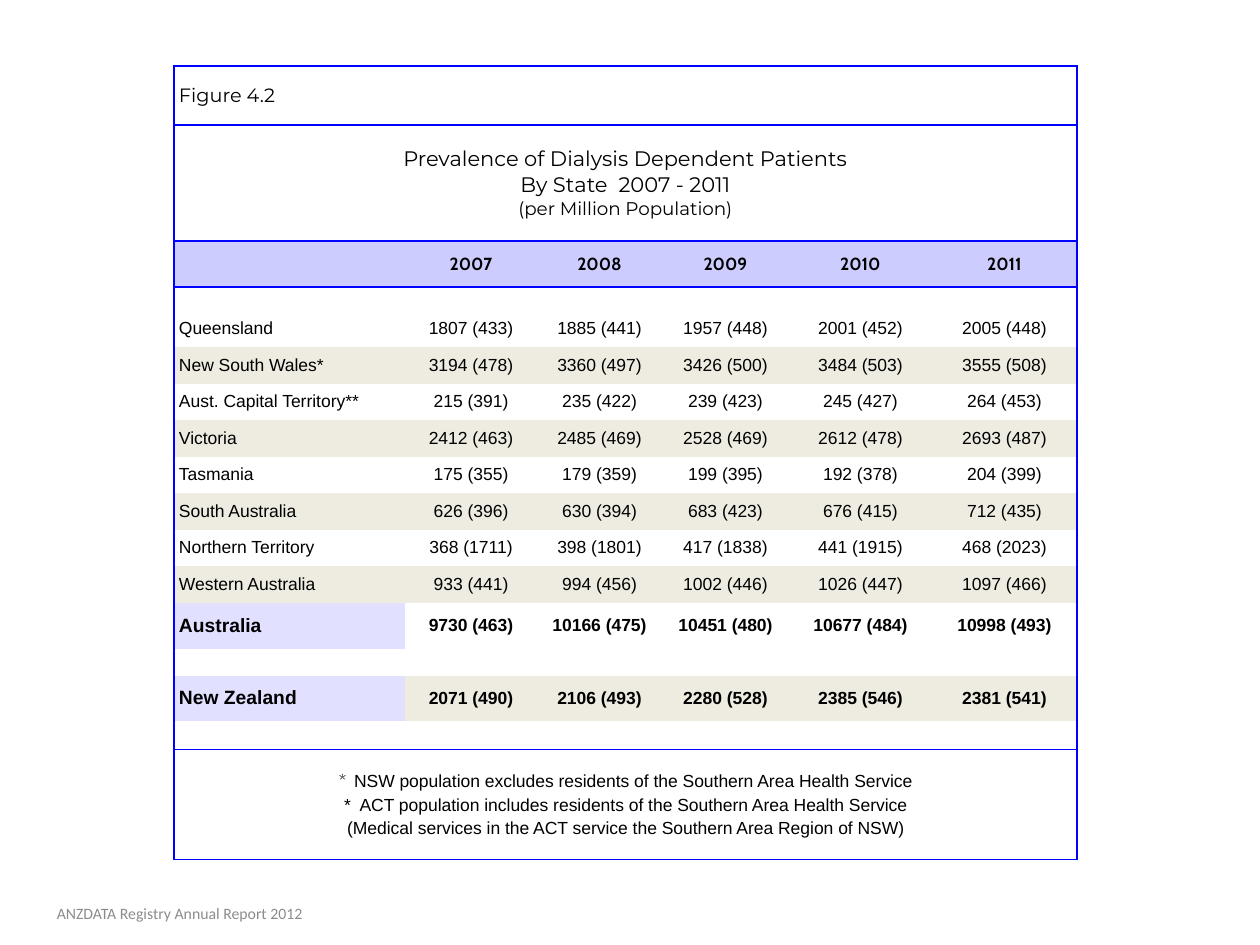
from lxml import etree
from pptx import Presentation
from pptx.dml.color import RGBColor
from pptx.enum.text import MSO_ANCHOR, PP_ALIGN
from pptx.oxml.ns import qn
from pptx.util import Pt

PX = 914400 / 126
LEFT, CENTER = PP_ALIGN.LEFT, PP_ALIGN.CENTER
MIDDLE = MSO_ANCHOR.MIDDLE
BLACK = RGBColor(0x00, 0x00, 0x00)
BLUE = RGBColor(0x00, 0x00, 0xFF)
HEAD = RGBColor(0xCC, 0xCC, 0xFF)
LILAC = RGBColor(0xE1, 0xE1, 0xFF)
SAND = RGBColor(0xEE, 0xEC, 0xE1)
GREY = RGBColor(0x8C, 0x8C, 0x8C)
NO_GRID = "{2D5ABB26-0587-4C30-8999-92F81FD0307C}"

COLS = [231, 132, 125, 127, 143, 145]
ROWS = [59, 116, 46, 24] + [36, 37] * 4 + [46, 27, 45, 29, 110]
CAPTION, TITLE, YEARS, FIRST, TOTAL, GAP, NZ, NOTES = 0, 1, 2, 4, 12, 13, 14, 16
MERGED = (CAPTION, TITLE, GAP, NOTES)
RULED = (CAPTION, TITLE, YEARS, NOTES)

STATES = [
    ("Queensland", "1807 (433)", "1885 (441)", "1957 (448)", "2001 (452)", "2005 (448)"),
    ("New South Wales*", "3194 (478)", "3360 (497)", "3426 (500)", "3484 (503)", "3555 (508)"),
    ("Aust. Capital Territory**", "215 (391)", "235 (422)", "239 (423)", "245 (427)", "264 (453)"),
    ("Victoria", "2412 (463)", "2485 (469)", "2528 (469)", "2612 (478)", "2693 (487)"),
    ("Tasmania", "175 (355)", "179 (359)", "199 (395)", "192 (378)", "204 (399)"),
    ("South Australia", "626 (396)", "630 (394)", "683 (423)", "676 (415)", "712 (435)"),
    ("Northern Territory", "368 (1711)", "398 (1801)", "417 (1838)", "441 (1915)", "468 (2023)"),
    ("Western Australia", "933 (441)", "994 (456)", "1002 (446)", "1026 (447)", "1097 (466)"),
]
TOTALS = {
    TOTAL: ("Australia", "9730 (463)", "10166 (475)", "10451 (480)", "10677 (484)", "10998 (493)"),
    NZ: ("New Zealand", "2071 (490)", "2106 (493)", "2280 (528)", "2385 (546)", "2381 (541)"),
}


def px(n):
    return round(n * PX)


def style(para, size, name="Arial", bold=False, align=CENTER, color=BLACK):
    para.alignment = align
    font = para.font
    font.size, font.name, font.bold = Pt(size), name, bold
    font.color.rgb = color


def rule(cell, sides):
    """Draw blue borders on the given sides, a string drawn from LRTB."""
    props = cell._tc.get_or_add_tcPr()
    for i, side in enumerate(s for s in "LRTB" if s in sides):
        line = etree.Element(qn("a:ln" + side), w=str(Pt(1)))
        fill = etree.SubElement(line, qn("a:solidFill"))
        etree.SubElement(fill, qn("a:srgbClr"), val=str(BLUE))
        props.insert(i, line)


def tint(r, c):
    if r == YEARS:
        return HEAD
    if r in TOTALS and c == 0:
        return LILAC
    if r == NZ or (FIRST <= r < TOTAL and (r - FIRST) % 2):
        return SAND
    return None


def dress(grid):
    """Set margins, fill, borders and blank-text size of every cell."""
    for r in range(len(ROWS)):
        for c in range(len(COLS)):
            cell = grid.cell(r, c)
            cell.margin_left = cell.margin_right = px(5)
            cell.margin_top = cell.margin_bottom = px(3)
            cell.vertical_anchor = MIDDLE
            color = tint(r, c)
            if color is None:
                cell.fill.background()
            else:
                cell.fill.solid()
                cell.fill.fore_color.rgb = color
            sides = "TB" if r in RULED else ""
            if c == 0 or r in MERGED:
                sides += "L"
            if c == len(COLS) - 1 or r in MERGED:
                sides += "R"
            rule(cell, sides)
            if not cell.text_frame.text:
                para = cell.text_frame.paragraphs[0]
                etree.SubElement(para._p, qn("a:endParaRPr"), sz="800")


def fill_row(grid, r, texts, name="Arial", bold=False, lead=10):
    """Write one row; lead is the size of its label."""
    for c, text in enumerate(texts):
        if text:
            para = grid.cell(r, c).text_frame.paragraphs[0]
            para.text = text
            style(para, 10 if c else lead, name, bold, CENTER if c else LEFT)


def add_title(cell):
    frame = cell.text_frame
    frame.text = ("Prevalence of Dialysis Dependent Patients\n"
                  "By State  2007 - 2011\n(per Million Population)")
    for para, size in zip(frame.paragraphs, (12, 12, 10.5)):
        style(para, size, "Montserrat")


def add_notes(cell):
    frame = cell.text_frame
    frame.text = ("*  \n"
                  "*  ACT population includes residents of the Southern Area Health Service\n"
                  "(Medical services in the ACT service the Southern Area Region of NSW)")
    first = frame.paragraphs[0]
    first.runs[0].font.name = "Cabin"
    run = first.add_run()
    run.text = "NSW population excludes residents of the Southern Area Health Service"
    for i, para in enumerate(frame.paragraphs):
        style(para, 10)
        para.space_after = Pt(1)
        if i:
            para.space_before = Pt(1)


def add_grid(slide, x, y):
    frame = slide.shapes.add_table(len(ROWS), len(COLS), px(x), px(y),
                                   px(sum(COLS)), px(sum(ROWS)))
    grid = frame.table
    grid.first_row = grid.horz_banding = False
    grid._tbl.find(".//" + qn("a:tableStyleId")).text = NO_GRID
    for col, wide in zip(grid.columns, COLS):
        col.width = px(wide)
    for row, high in zip(grid.rows, ROWS):
        row.height = px(high)
    for r in MERGED:
        grid.cell(r, 0).merge(grid.cell(r, len(COLS) - 1))

    fill_row(grid, CAPTION, ["Figure 4.2"], "Montserrat", lead=11)
    add_title(grid.cell(TITLE, 0))
    fill_row(grid, YEARS, [""] + [str(y) for y in range(2007, 2012)], "Cabin", True)
    for r, texts in enumerate(STATES, FIRST):
        fill_row(grid, r, texts)
    for r, texts in TOTALS.items():
        fill_row(grid, r, texts, bold=True, lead=11)
    add_notes(grid.cell(NOTES, 0))
    dress(grid)


def add_foot(slide, x, y, w, h):
    frame = slide.shapes.add_textbox(px(x), px(y), px(w), px(h)).text_frame
    frame.word_wrap = True
    frame.vertical_anchor = MIDDLE
    para = frame.paragraphs[0]
    para.text = "ANZDATA Registry Annual Report 2012"
    style(para, 9, "Calibri", color=GREY)


def main():
    deck = Presentation()
    deck.slide_width, deck.slide_height = px(1260), px(945)
    slide = deck.slides.add_slide(deck.slide_layouts[6])
    add_grid(slide, 174, 66)
    add_foot(slide, -5, 888, 369, 50)
    deck.save("out.pptx")


if __name__ == "__main__":
    main()
